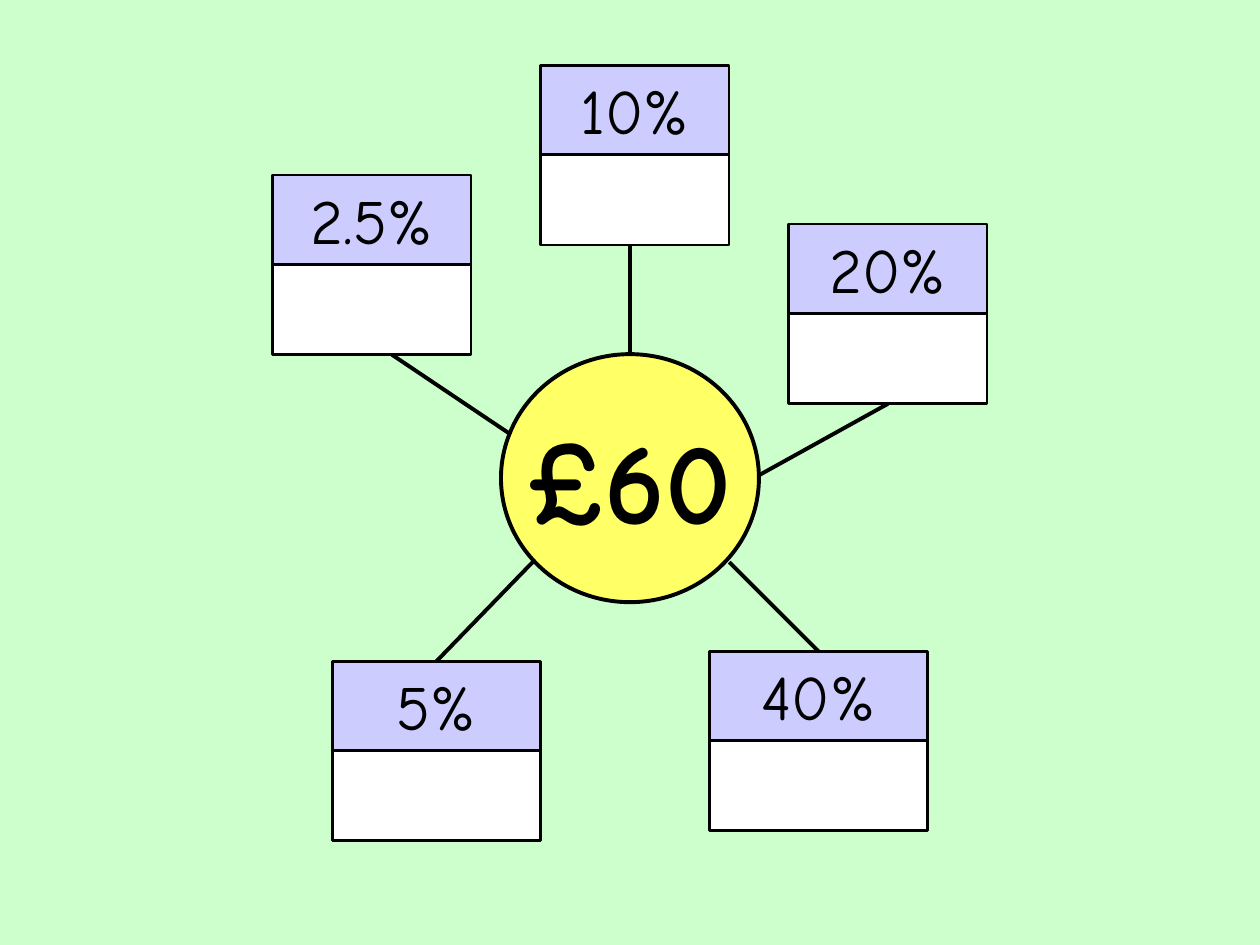
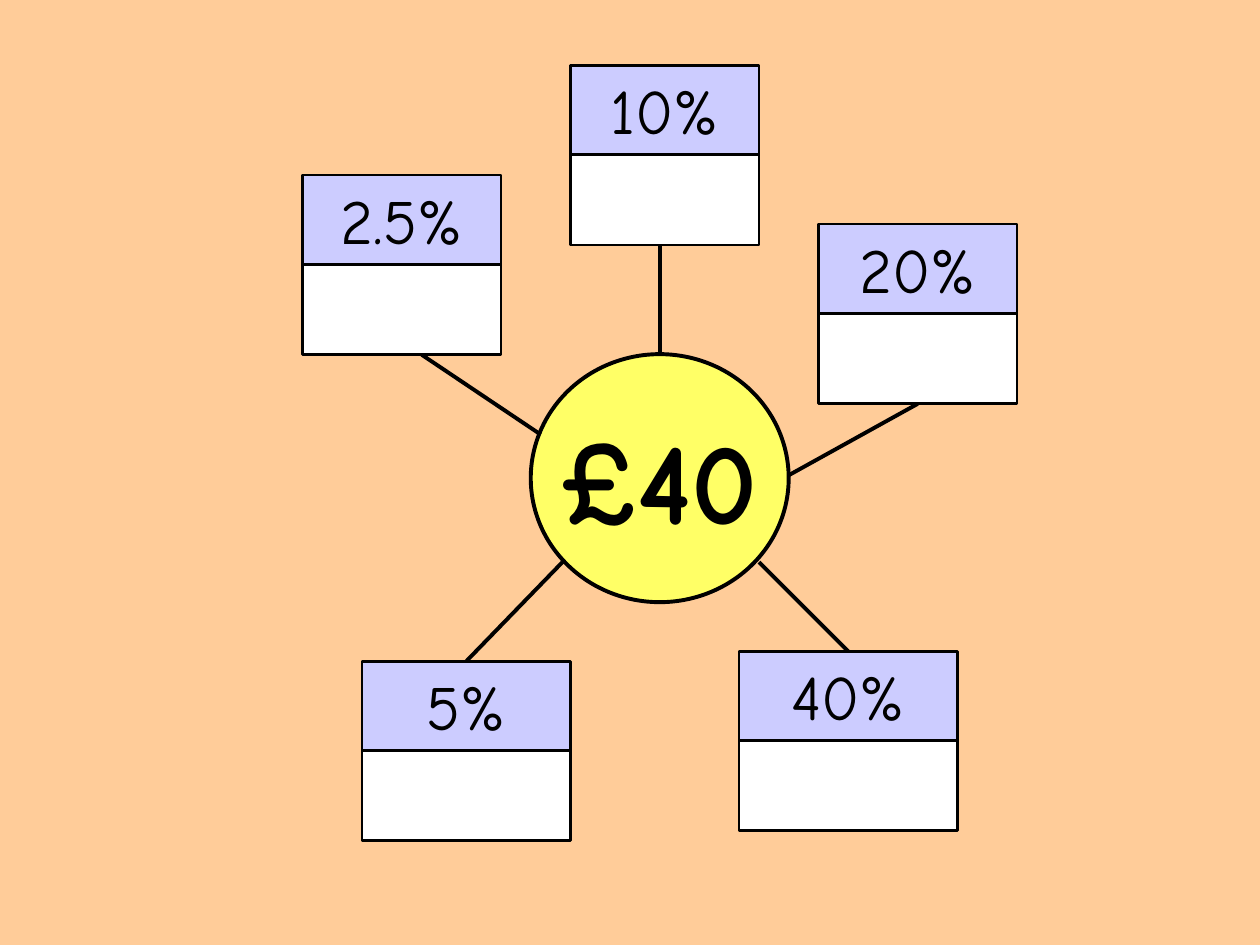
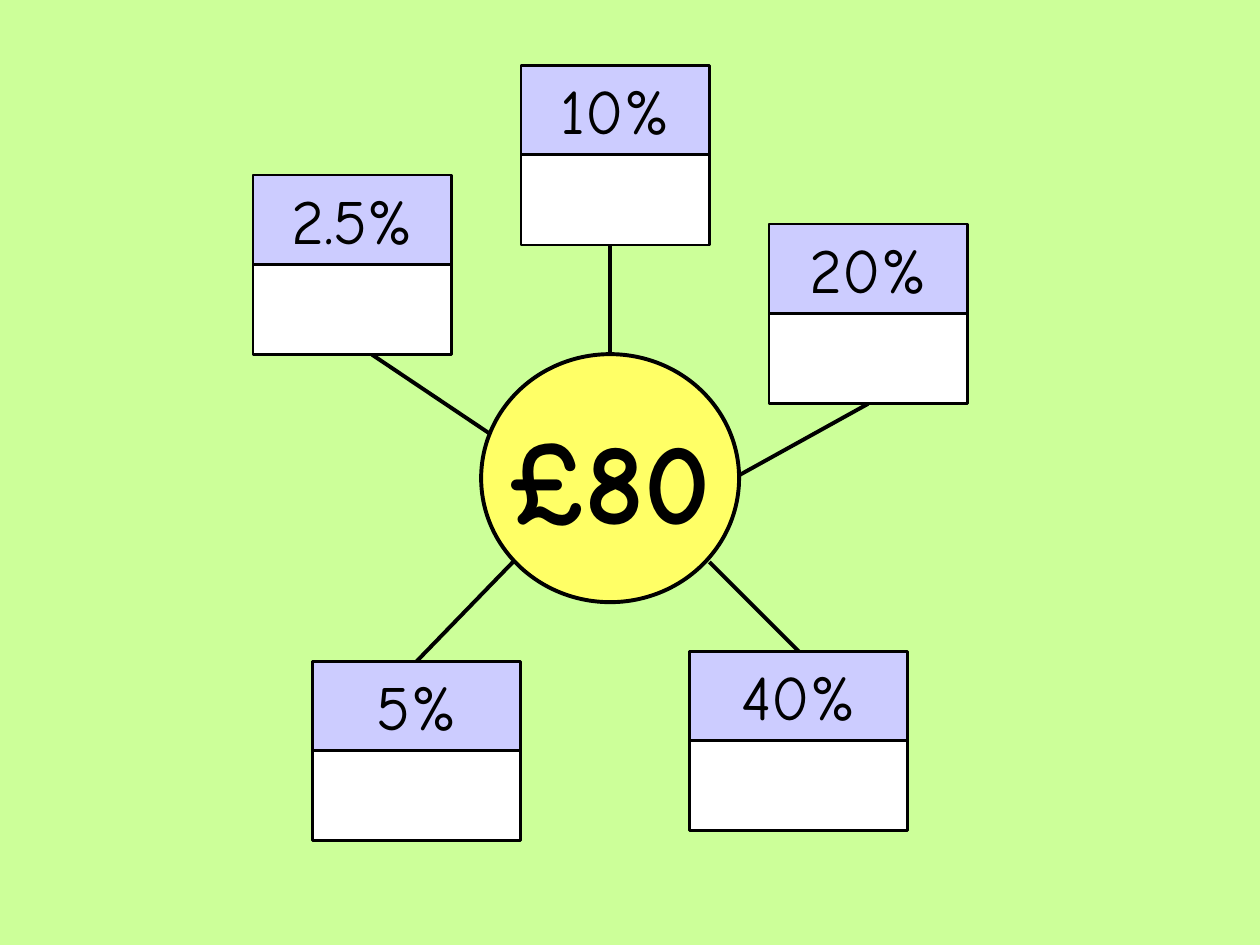
import pptx
import pptx.util
import pptx.dml.color
import pptx.enum.shapes
import pptx.enum.text
import pptx.oxml
from collections import namedtuple
from pptx.util import Cm

RGBColor = pptx.dml.color.RGBColor
BLACK = RGBColor(0x00, 0x00, 0x00)
WHITE = RGBColor(0xFF, 0xFF, 0xFF)
LILAC = RGBColor(0xCC, 0xCC, 0xFF)
YELLOW = RGBColor(0xFF, 0xFF, 0x66)
MINT = RGBColor(0xCC, 0xFF, 0xCC)
PEACH = RGBColor(0xFF, 0xCC, 0x99)
LIME = RGBColor(0xCC, 0xFF, 0x99)

FONT = "Comic Neue"
RECTANGLE = pptx.enum.shapes.MSO_SHAPE.RECTANGLE
OVAL = pptx.enum.shapes.MSO_SHAPE.OVAL
TOP, BOTTOM = 0, 2

HUB_WIDTH, HUB_HEIGHT, HUB_TOP = 5.2, 5.0, 7.14
CELL_HEIGHT, CELL_STEP = 1.82, 1.8

Branch = namedtuple("Branch", "percent left top width hub_end card_end side")

# Horizontal values are measured from the hub's centre.
BRANCHES = [
    Branch("10%", -1.8, 1.32, 3.8, (0, 7.14), (0, 4.95), None),
    Branch("5%", -6.0, 13.33, 4.2, (-1.96, 11.33), (-3.9, 13.33), TOP),
    Branch("20%", 3.2, 4.52, 4.0, (2.6, 9.58), (5.2, 8.14), BOTTOM),
    Branch("40%", 1.6, 13.13, 4.4, (2.0, 11.33), (3.8, 13.13), TOP),
    Branch("2.5%", -7.2, 3.53, 4.0, (-2.4, 8.76), (-4.8, 7.15), None),
]

SLIDES = [("£60", MINT, 12.7), ("£40", PEACH, 13.3), ("£80", LIME, 12.3)]


def add_box(slide, kind, left, top, width, height, fill, line_width):
    shape = slide.shapes.add_shape(kind, Cm(left), Cm(top), Cm(width), Cm(height))
    shape.shadow.inherit = False
    shape.fill.solid()
    shape.fill.fore_color.rgb = fill
    shape.line.color.rgb = BLACK
    shape.line.width = pptx.util.Pt(line_width)
    return shape


def write_text(shape, text, size, anchor, bold=False, wrap=True):
    frame = shape.text_frame
    frame.word_wrap = wrap
    frame.vertical_anchor = anchor
    paragraph = frame.paragraphs[0]
    paragraph.alignment = pptx.enum.text.PP_ALIGN.CENTER
    run = paragraph.add_run()
    run.text = text
    run.font.name = FONT
    run.font.size = pptx.util.Pt(size)
    run.font.bold = bold
    run.font.color.rgb = BLACK


def add_hub(slide, amount, centre):
    hub = add_box(slide, OVAL, centre - HUB_WIDTH / 2, HUB_TOP,
                  HUB_WIDTH, HUB_HEIGHT, YELLOW, 2.25)
    write_text(hub, amount, 66, pptx.enum.text.MSO_ANCHOR.MIDDLE, bold=True, wrap=False)
    return hub


def add_card(slide, branch, centre):
    left = centre + branch.left
    header = add_box(slide, RECTANGLE, left, branch.top,
                     branch.width, CELL_HEIGHT, LILAC, 1.5)
    write_text(header, branch.percent, 36, pptx.enum.text.MSO_ANCHOR.TOP)
    answer = add_box(slide, RECTANGLE, left, branch.top + CELL_STEP,
                     branch.width, CELL_HEIGHT, WHITE, 1.5)
    return {TOP: header, BOTTOM: answer}


def add_spoke(slide, branch, centre, cells):
    (hub_x, hub_y), (card_x, card_y) = branch.hub_end, branch.card_end
    spoke = slide.shapes.add_connector(
        pptx.enum.shapes.MSO_CONNECTOR.STRAIGHT,
        Cm(centre + hub_x), Cm(hub_y), Cm(centre + card_x), Cm(card_y))
    spoke.line.color.rgb = BLACK
    spoke.line.width = pptx.util.Pt(2.25)
    properties = spoke._element.spPr
    properties.append(pptx.oxml.parse_xml(
        '<a:effectLst xmlns:a="http://schemas.openxmlformats.org/drawingml/2006/main"/>'))
    if branch.side is not None:
        spoke.end_connect(cells[branch.side], branch.side)
    return spoke


def add_percentage_slide(presentation, amount, background, centre):
    slide = presentation.slides.add_slide(presentation.slide_layouts[6])
    slide.background.fill.solid()
    slide.background.fill.fore_color.rgb = background
    hub = add_hub(slide, amount, centre)
    for branch in BRANCHES:
        cells = add_card(slide, branch, centre)
        spoke = add_spoke(slide, branch, centre, cells)
        if branch.hub_end == (0, HUB_TOP):
            spoke.begin_connect(hub, TOP)


def main():
    presentation = pptx.Presentation()
    presentation.slide_width = Cm(25.4)
    presentation.slide_height = Cm(19.05)
    for amount, background, centre in SLIDES:
        add_percentage_slide(presentation, amount, background, centre)
    presentation.save("out.pptx")


if __name__ == "__main__":
    main()
